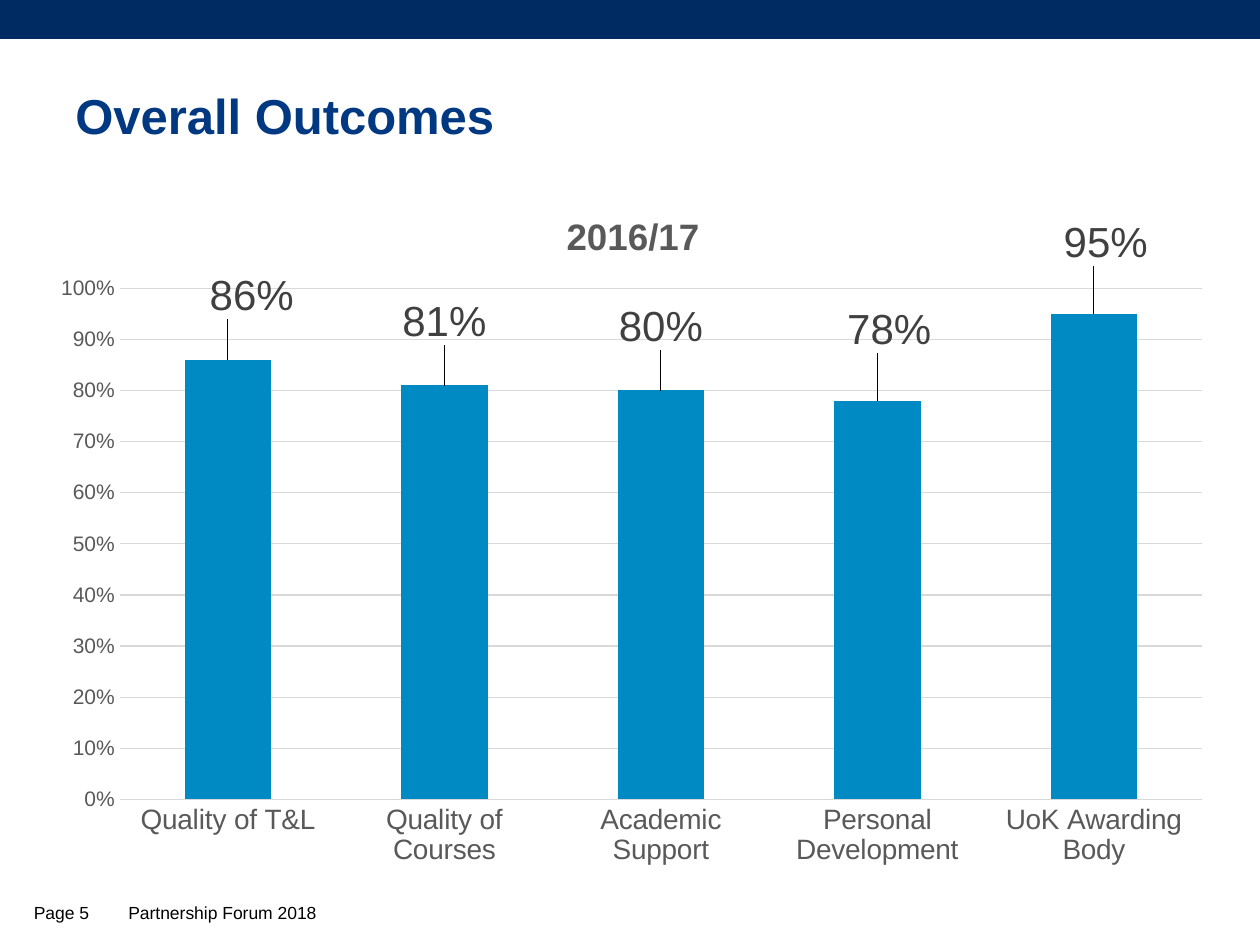
import dataclasses

import pptx
import pptx.chart.data
import pptx.dml.color
import pptx.enum.chart
import pptx.enum.shapes
import pptx.enum.text
import pptx.oxml
import pptx.oxml.ns
import pptx.util
from pptx.util import Inches

FONT = "Arial"
COLORS = {
    "band": "002A62",
    "title": "003882",
    "bar": "008AC4",
    "label": "404040",
    "axis": "595959",
    "grid": "D9D9D9",
    "text": "000000",
}


@dataclasses.dataclass
class Label:
    text: str
    left: float
    top: float
    width: float
    height: float
    size: float = 10
    color: str = "text"
    bold: bool = False
    middle: bool = True


@dataclasses.dataclass
class Score:
    name: str
    value: float
    shift: tuple[float, float]


LABELS = [
    Label("Overall Outcomes", 0.5, 0.6, 9.07, 0.63, 28, "title", True),
    Label("Partnership Forum 2018", 0.92, 7.11, 6.62, 0.3, middle=False),
    Label("Page 5", 0.17, 7.1, 0.74, 0.29),
]
# Shifts move the value labels, as shares of the chart's width and height.
SCORES = [
    Score("Quality of T&L", 0.86, (0.02, -0.05)),
    Score("Quality of Courses", 0.81, (0, -0.05)),
    Score("Academic Support", 0.80, (0, -0.05)),
    Score("Personal Development", 0.78, (0.01, -0.06)),
    Score("UoK Awarding Body", 0.95, (0.01, -0.06)),
]


def shade(name: str) -> pptx.dml.color.RGBColor:
    return pptx.dml.color.RGBColor.from_string(COLORS[name])


def style(font, size: float, color: str, bold: bool = False) -> None:
    font.name = FONT
    font.size = pptx.util.Pt(size)
    font.bold = bold
    font.color.rgb = shade(color)


def rule(line, width: float) -> None:
    line.color.rgb = shade("grid")
    line.width = pptx.util.Pt(width)


def layout(**parts):
    """Make a manual chart layout from its settings, in schema order."""
    body = "".join(f'<c:{key} val="{val}"/>' for key, val in parts.items())
    return pptx.oxml.parse_xml(
        f'<c:layout {pptx.oxml.ns.nsdecls("c")}>'
        f"<c:manualLayout>{body}</c:manualLayout></c:layout>"
    )


def set_layout(parent, index: int, **parts) -> None:
    for old in parent.xpath("./c:layout"):
        parent.remove(old)
    parent.insert(index, layout(**parts))


def add_band(slide) -> None:
    band = slide.shapes.add_shape(
        pptx.enum.shapes.MSO_SHAPE.RECTANGLE, 0, 0, Inches(10), Inches(0.31)
    )
    band.shadow.inherit = False
    band.fill.solid()
    band.fill.fore_color.rgb = shade("band")
    band.line.fill.background()


def add_label(slide, label: Label) -> None:
    box = slide.shapes.add_textbox(
        Inches(label.left), Inches(label.top), Inches(label.width), Inches(label.height)
    )
    frame = box.text_frame
    frame.word_wrap = True
    anchor = pptx.enum.text.MSO_ANCHOR
    frame.vertical_anchor = anchor.MIDDLE if label.middle else anchor.TOP
    para = frame.paragraphs[0]
    para.text = label.text
    style(para.font, label.size, label.color, label.bold)


def style_axes(chart) -> None:
    none = pptx.enum.chart.XL_TICK_MARK.NONE
    for axis, size in ((chart.category_axis, 16), (chart.value_axis, 12)):
        axis.major_tick_mark = axis.minor_tick_mark = none
        style(axis.tick_labels.font, size, "axis")
    rule(chart.category_axis.format.line, 1)
    scale = chart.value_axis
    scale.minimum_scale, scale.maximum_scale, scale.major_unit = 0, 1, 0.1
    scale.tick_labels.number_format = "0%"
    scale.tick_labels.number_format_is_linked = False
    scale.format.line.fill.background()
    rule(scale.major_gridlines.format.line, 0.75)


def style_bars(plot) -> None:
    plot.gap_width = 150
    plot.vary_by_categories = False
    bars = plot.series[0]
    bars.format.fill.solid()
    bars.format.fill.fore_color.rgb = shade("bar")
    marks = bars.data_labels
    marks.show_value = True
    marks.number_format = "0%"
    marks.number_format_is_linked = False
    style(marks.font, 24, "label")
    for index in range(len(SCORES)):
        mark = bars.points[index].data_label
        mark.position = pptx.enum.chart.XL_LABEL_POSITION.OUTSIDE_END
        style(mark.font, 24, "label")


def add_chart(slide) -> None:
    data = pptx.chart.data.CategoryChartData(number_format="0%")
    data.categories = [score.name for score in SCORES]
    data.add_series("Series 1", [score.value for score in SCORES])
    chart = slide.shapes.add_chart(
        pptx.enum.chart.XL_CHART_TYPE.COLUMN_CLUSTERED,
        Inches(0.29), Inches(1.42), Inches(9.44), Inches(5.56), data,
    ).chart
    style(chart.font, 10, "text")
    chart.has_legend = False
    chart.has_title = True
    para = chart.chart_title.text_frame.paragraphs[0]
    para.text = "2016/17"
    style(para.font, 21, "axis", True)
    chart.chart_title.include_in_layout = False
    style_axes(chart)
    style_bars(chart.plots[0])

    root = chart.element
    set_layout(root.xpath(".//c:chart/c:title")[0], 1,
               xMode="edge", yMode="edge", x=0.44, y=0.04)
    set_layout(root.xpath(".//c:plotArea")[0], 0, layoutTarget="inner",
               xMode="edge", yMode="edge", x=0.07, y=0.156, w=0.91, h=0.73)
    for mark, score in zip(root.xpath(".//c:dLbl"), SCORES):
        set_layout(mark, 1, x=score.shift[0], y=score.shift[1])


def main() -> None:
    deck = pptx.Presentation()
    deck.slide_width, deck.slide_height = Inches(10), Inches(7.5)
    slide = deck.slides.add_slide(deck.slide_layouts[6])
    add_band(slide)
    add_chart(slide)
    for label in LABELS:
        add_label(slide, label)
    deck.save("out.pptx")


if __name__ == "__main__":
    main()
